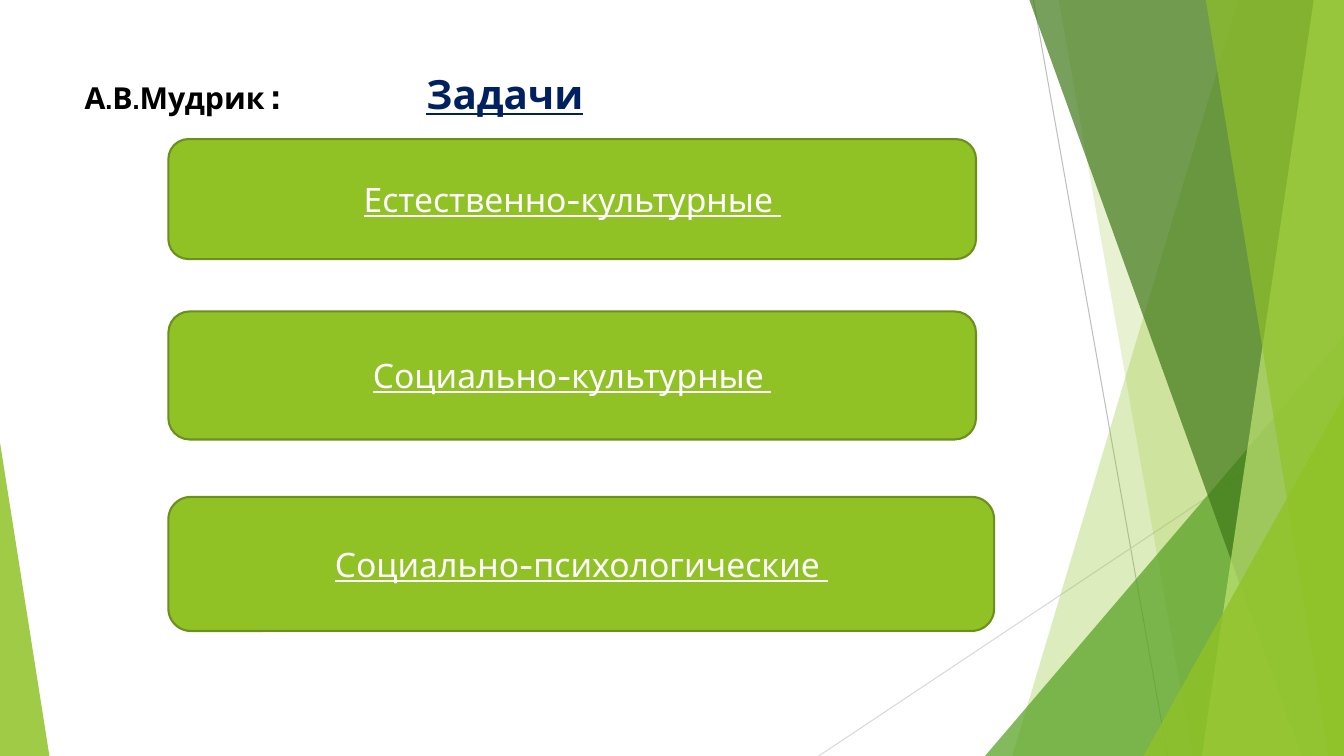
from dataclasses import dataclass

import pptx
import pptx.dml.color
import pptx.enum.shapes
import pptx.enum.text
import pptx.oxml
import pptx.oxml.ns
import pptx.shapes.autoshape
import pptx.shapes.base
import pptx.slide
import pptx.text.text
import pptx.util

Inches = pptx.util.Inches
Pt = pptx.util.Pt
RGBColor = pptx.dml.color.RGBColor
MSO_SHAPE = pptx.enum.shapes.MSO_SHAPE

WIDTH, HEIGHT = 13.33, 7.5
FONT = "Cabin"

LIME = RGBColor(0x90, 0xC2, 0x26)
PALE_LIME = RGBColor(0xC0, 0xE4, 0x74)
GREEN = RGBColor(0x54, 0xA0, 0x21)
DARK_GREEN = RGBColor(0x3F, 0x78, 0x19)
OLIVE = RGBColor(0x6B, 0x90, 0x1C)
NAVY = RGBColor(0x00, 0x20, 0x60)
BLACK = RGBColor(0x00, 0x00, 0x00)
WHITE = RGBColor(0xFF, 0xFF, 0xFF)
GREY = RGBColor(0xBF, 0xBF, 0xBF)
LIGHT_GREY = RGBColor(0xD9, 0xD9, 0xD9)


@dataclass(frozen=True)
class Ray:
    start: tuple[float, float]
    end: tuple[float, float]
    color: RGBColor


@dataclass(frozen=True)
class Band:
    """A full-height facet reaching the right edge, with a slanted left side."""
    top_x: float
    bottom_x: float
    color: RGBColor
    opacity: int


@dataclass(frozen=True)
class Wedge:
    """A right triangle standing on the bottom edge; apex is 0 (left) or 1 (right)."""
    left: float
    top: float
    width: float
    apex: int
    color: RGBColor
    opacity: int


@dataclass(frozen=True)
class Task:
    text: str
    top: float
    width: float
    height: float


RAYS = [
    Ray((10.25, 0), (11.58, HEIGHT), GREY),
    Ray((WIDTH, 4.03), (8.12, HEIGHT), LIGHT_GREY),
]
FACETS = [
    Band(12.28, 10.04, LIME, 30),
    Band(10.5, 11.83, LIME, 20),
    Wedge(9.77, 3.33, 3.56, 1, GREEN, 72),
    Band(10.21, 12.91, DARK_GREEN, 70),
    Band(13.03, 11.92, PALE_LIME, 70),
    Band(11.96, 13.18, LIME, 65),
    Wedge(11.34, 3.93, 1.99, 1, LIME, 80),
    Wedge(0, 4.39, 0.49, 0, LIME, 85),
]
TASKS = [
    Task("Естественно-культурные ", 1.38, 8.01, 1.19),
    Task("Социально-культурные ", 3.09, 8.01, 1.27),
    Task("Социально-психологические ", 4.93, 8.19, 1.33),
]
TASK_LEFT = 1.67


def draw_ray(slide: pptx.slide.Slide, ray: Ray) -> None:
    line = slide.shapes.add_connector(
        pptx.enum.shapes.MSO_CONNECTOR.STRAIGHT,
        *(Inches(value) for value in ray.start + ray.end))
    line.line.color.rgb = ray.color
    line.line.width = Pt(0.75)
    properties = line._element.spPr
    properties.append(pptx.oxml.parse_xml(
        f'<a:effectLst {pptx.oxml.ns.nsdecls("a")}/>'))


def paint_facet(shape: pptx.shapes.base.BaseShape, color: RGBColor, opacity: int) -> None:
    shape.shadow.inherit = False
    shape.line.fill.background()
    shape.fill.solid()
    shape.fill.fore_color.rgb = color
    color_element = shape._element.spPr.find(".//" + pptx.oxml.ns.qn("a:srgbClr"))
    color_element.append(pptx.oxml.parse_xml(
        f'<a:alpha {pptx.oxml.ns.nsdecls("a")} val="{opacity * 1000}"/>'))


def draw_facet(slide: pptx.slide.Slide, facet: Band | Wedge) -> None:
    if isinstance(facet, Band):
        outline = slide.shapes.build_freeform(Inches(facet.top_x), 0)
        corners = [(WIDTH, 0), (WIDTH, HEIGHT), (facet.bottom_x, HEIGHT)]
        outline.add_line_segments([(Inches(x), Inches(y)) for x, y in corners])
        shape = outline.convert_to_shape()
    else:
        shape = slide.shapes.add_shape(
            MSO_SHAPE.ISOSCELES_TRIANGLE, Inches(facet.left), Inches(facet.top),
            Inches(facet.width), Inches(HEIGHT - facet.top))
        shape.adjustments[0] = facet.apex
    paint_facet(shape, facet.color, facet.opacity)


def format_run(run: pptx.text.text._Run, size: float, color: RGBColor,
               bold: bool = False, underline: bool = False) -> None:
    run.font.name = FONT
    run.font.size = Pt(size)
    run.font.color.rgb = color
    run.font.bold = bold
    run.font.underline = underline


def draw_heading(slide: pptx.slide.Slide) -> None:
    heading = slide.shapes.add_textbox(
        Inches(0.74), Inches(0.67), Inches(9.4), Inches(0.65))
    frame = heading.text_frame
    frame.word_wrap = True
    frame.margin_top = Inches(0.02)
    paragraph = frame.paragraphs[0]
    paragraph._p.get_or_add_pPr().append(pptx.oxml.parse_xml(
        f'<a:tabLst {pptx.oxml.ns.nsdecls("a")}>'
        f'<a:tab pos="{Inches(3.39)}" algn="l"/></a:tabLst>'))
    for text, size, color, underline in [
        ("А.В.Мудрик ", 21.6, BLACK, False),
        (":\t", 28.8, BLACK, False),
        ("Задачи", 28.8, NAVY, True),
    ]:
        run = paragraph.add_run()
        run.text = text
        format_run(run, size, color, bold=True, underline=underline)


def draw_task(slide: pptx.slide.Slide, task: Task) -> None:
    box = slide.shapes.add_shape(
        MSO_SHAPE.ROUNDED_RECTANGLE, Inches(TASK_LEFT), Inches(task.top),
        Inches(task.width), Inches(task.height))
    box.shadow.inherit = False
    box.fill.solid()
    box.fill.fore_color.rgb = LIME
    box.line.color.rgb = OLIVE
    box.line.width = Pt(1.5)
    frame = box.text_frame
    frame.text = task.text
    frame.word_wrap = True
    frame.vertical_anchor = pptx.enum.text.MSO_ANCHOR.MIDDLE
    paragraph = frame.paragraphs[0]
    paragraph.alignment = pptx.enum.text.PP_ALIGN.CENTER
    format_run(paragraph.runs[0], 24, WHITE, underline=True)


def main() -> None:
    presentation = pptx.Presentation()
    presentation.slide_width = Inches(WIDTH)
    presentation.slide_height = Inches(HEIGHT)
    slide = presentation.slides.add_slide(presentation.slide_layouts[6])
    for ray in RAYS:
        draw_ray(slide, ray)
    for facet in FACETS:
        draw_facet(slide, facet)
    draw_heading(slide)
    for task in TASKS:
        draw_task(slide, task)
    presentation.save("out.pptx")


if __name__ == "__main__":
    main()
